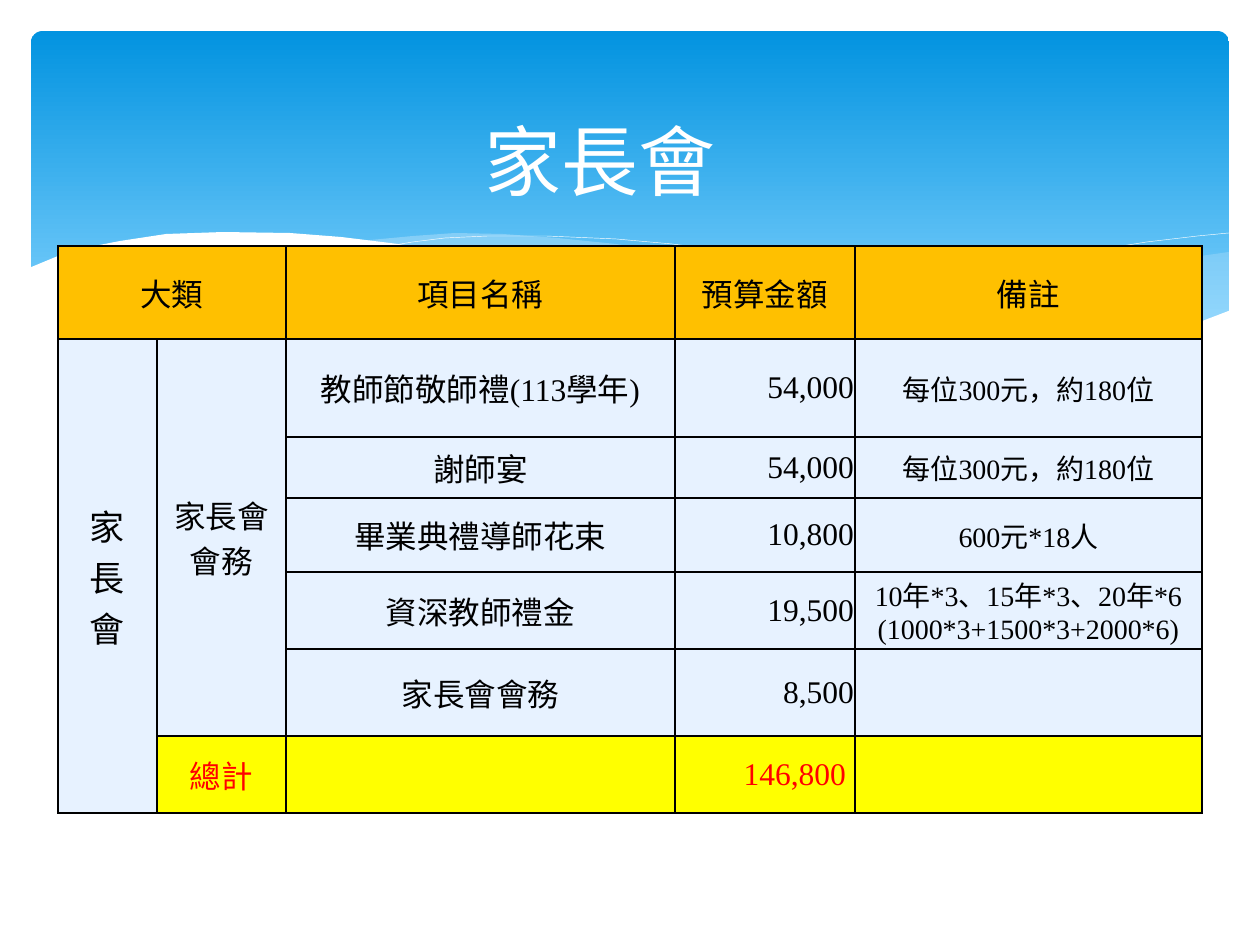
from lxml import etree
from pptx import Presentation
from pptx import util as u
from pptx.dml.color import RGBColor
from pptx.enum import shapes, text
from pptx.oxml import ns

SCALE = 914400 / 126
WHITE = RGBColor(0xFF, 0xFF, 0xFF)
BLACK = RGBColor(0x00, 0x00, 0x00)
RED = RGBColor(0xFF, 0x00, 0x00)
YELLOW = RGBColor(0xFF, 0xFF, 0x00)
AMBER = RGBColor(0xFF, 0xC0, 0x00)
PALE_BLUE = RGBColor(0xE7, 0xF2, 0xFF)
WAVE_BLUE = RGBColor(0xC6, 0xE7, 0xFC)
SKY_TOP = RGBColor(0x02, 0x93, 0xE0)
SKY_BOTTOM = RGBColor(0x83, 0xD3, 0xFE)
CENTER, RIGHT = text.PP_ALIGN.CENTER, text.PP_ALIGN.RIGHT

RIGHT_WAVE = [
    (1198, 221), (1163, 226), (1111, 237), (1054, 250), (983, 268), (918, 281),
    (859, 293), (802, 303), (840, 308), (891, 314), (938, 318), (995, 319),
    (1045, 317), (1089, 312), (1129, 303), (1165, 293), (1198, 280)]
MIDDLE_WAVE = [
    (1094, 313), (1060, 308), (986, 297), (903, 280), (811, 260), (741, 244),
    (686, 231), (634, 221), (585, 213), (526, 207), (472, 203), (424, 202),
    (382, 205), (329, 210), (376, 216), (425, 225), (478, 235), (535, 249),
    (637, 271), (726, 290), (788, 302), (845, 309), (896, 316), (958, 319),
    (1025, 319), (1061, 317)]
FALLING_LINE = [
    (358, 215), (382, 211), (414, 207), (457, 205), (515, 205), (585, 208),
    (641, 213), (702, 221), (770, 231), (845, 245), (927, 263), (1016, 285),
    (1112, 312)]
RISING_LINE = [
    (741, 293), (792, 279), (845, 265), (911, 250), (985, 234), (1060, 220),
    (1116, 211), (1167, 205), (1198, 202)]
WHITE_WAVE = [
    (1200, 279), (1166, 292), (1128, 303), (1087, 310), (1040, 316), (988, 318),
    (928, 316), (861, 309), (784, 299), (699, 284), (603, 263), (496, 237),
    (429, 224), (367, 213), (310, 206), (259, 202), (192, 201), (135, 203),
    (89, 210), (53, 217), (27, 225), (-2, 237), (-2, 384), (1200, 384)]

COLUMN_WIDTHS = [99, 129, 389, 180, 347]
ROW_HEIGHTS = [93, 98, 61, 74, 77, 87, 77]
MERGES = [((0, 0), (0, 1)), ((1, 0), (6, 0)), ((1, 1), (5, 1))]
BUDGET = [
    ["大類", "", "項目名稱", "預算金額", "備註"],
    ["家\v長\v會", "家長會\n會務", "教師節敬師禮(113學年)", "54,000", "每位300元，約180位"],
    ["", "", "謝師宴", "54,000", "每位300元，約180位"],
    ["", "", "畢業典禮導師花束", "10,800", "600元*18人"],
    ["", "", "資深教師禮金", "19,500", "10年*3、15年*3、20年*6 (1000*3+1500*3+2000*6)"],
    ["", "", "家長會會務", "8,500", ""],
    ["", "總計", "", "146,800 ", ""],
]


def px(length):
    return u.Emu(round(length * SCALE))


def write(frame, content, size=18, font="Times New Roman", color=BLACK, align=CENTER):
    frame.word_wrap = True
    frame.text = content
    for paragraph in frame.paragraphs:
        paragraph.alignment = align
        for run in paragraph.runs:
            run.font.size = u.Pt(size)
            run.font.name = font
            run.font.color.rgb = color


def add_wave(slide, box, points, fill=None, opacity=100):
    builder = slide.shapes.build_freeform(*points[0], scale=SCALE)
    builder.add_line_segments(points[1:], close=fill is not None)
    shape = builder.convert_to_shape(px(box[0]), px(box[1]))
    shape.shadow.inherit = False
    if fill is None:
        shape.fill.background()
        shape.line.color.rgb = WHITE
        shape.line.width = u.Pt(0.25)
        return
    shape.line.fill.background()
    shape.fill.solid()
    shape.fill.fore_color.rgb = fill
    if opacity < 100:
        color = shape.fill._xPr.find(".//" + ns.qn("a:srgbClr"))
        etree.SubElement(color, ns.qn("a:alpha"), val=str(opacity * 1000))


def add_banner(slide, box):
    shape = slide.shapes.add_shape(
        shapes.MSO_SHAPE.ROUNDED_RECTANGLE, *map(px, box))
    shape.adjustments[0] = 0.034
    shape.shadow.inherit = False
    shape.line.fill.background()
    shape.fill.gradient()
    shape.fill.gradient_angle = 270
    stops = zip(shape.fill.gradient_stops, (SKY_TOP, SKY_BOTTOM), (0, 0.9))
    for stop, color, position in stops:
        stop.color.rgb = color
        stop.position = position
    add_wave(slide, box, RIGHT_WAVE, WAVE_BLUE, 29)
    add_wave(slide, box, MIDDLE_WAVE, WAVE_BLUE, 40)
    add_wave(slide, box, FALLING_LINE)
    add_wave(slide, box, RISING_LINE)
    add_wave(slide, box, WHITE_WAVE, WHITE)


def add_title(slide, box):
    frame = slide.shapes.add_textbox(*map(px, box)).text_frame
    frame.vertical_anchor = text.MSO_ANCHOR.MIDDLE
    write(frame, "家長會", size=44, font="Calibri", color=WHITE)


def add_borders(cell):
    properties = cell._tc.get_or_add_tcPr()
    for index, side in enumerate(("lnL", "lnR", "lnT", "lnB")):
        line = etree.Element(ns.qn("a:" + side), w=str(u.Pt(1)))
        fill = etree.SubElement(line, ns.qn("a:solidFill"))
        etree.SubElement(fill, ns.qn("a:srgbClr"), val=str(BLACK))
        properties.insert(index, line)


def format_cell(cell, row, column, content):
    total = row == len(BUDGET) - 1 and column > 0
    cell.fill.solid()
    cell.fill.fore_color.rgb = AMBER if row == 0 else YELLOW if total else PALE_BLUE
    cell.vertical_anchor = text.MSO_ANCHOR.MIDDLE
    cell.margin_left = cell.margin_right = px(1)
    cell.margin_top = cell.margin_bottom = px(1)
    size = {0: 20, 4: 16}.get(column, 18) if row else 18
    align = RIGHT if row and column == 3 else CENTER
    write(cell.text_frame, content, size=size, color=RED if total else BLACK, align=align)
    add_borders(cell)


def add_budget_table(slide, box):
    table = slide.shapes.add_table(
        len(ROW_HEIGHTS), len(COLUMN_WIDTHS), *map(px, box)).table
    table.first_row = table.horz_banding = False
    for column, width in zip(table.columns, COLUMN_WIDTHS):
        column.width = px(width)
    for row, height in zip(table.rows, ROW_HEIGHTS):
        row.height = px(height)
    for first, last in MERGES:
        table.cell(*first).merge(table.cell(*last))
    for row, contents in enumerate(BUDGET):
        for column, content in enumerate(contents):
            format_cell(table.cell(row, column), row, column, content)


def main():
    presentation = Presentation()
    presentation.slide_width, presentation.slide_height = px(1260), px(945)
    slide = presentation.slides.add_slide(presentation.slide_layouts[6])
    add_banner(slide, (31, 31, 1198, 340))
    add_title(slide, (33, 73, 1134, 173))
    add_budget_table(slide, (58, 246, sum(COLUMN_WIDTHS), sum(ROW_HEIGHTS)))
    presentation.save("out.pptx")


if __name__ == "__main__":
    main()
